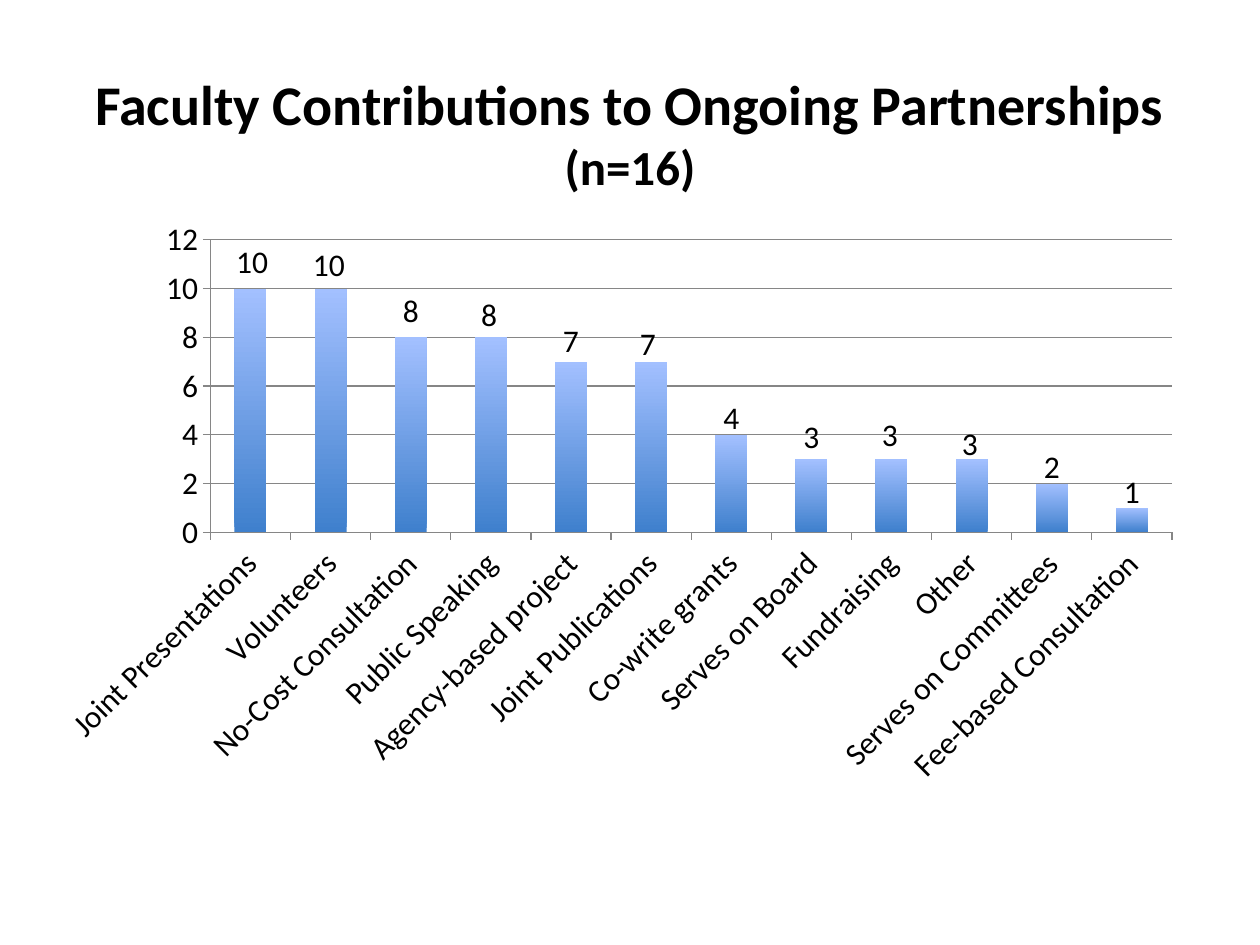
from dataclasses import dataclass

from lxml import etree
from pptx import Presentation
from pptx import util as u
from pptx.chart.data import CategoryChartData
from pptx.dml.color import RGBColor
from pptx.enum import chart as ch
from pptx.enum import text
from pptx.oxml.ns import qn

FONT = "Calibri"
BLACK, GREY = "000000", "868686"
BAR_BOTTOM, BAR_TOP = "3F80CD", "A3C0FF"


@dataclass
class Contribution:
    name: str
    count: int
    lift: float  # label shift upwards, in percent of the chart height
    shift: float = 0  # label shift sideways, in percent of the chart width


CONTRIBUTIONS = [
    Contribution("Joint Presentations", 10, 8.5, 0.15),
    Contribution("Volunteers", 10, 7.9, -0.15),
    Contribution("No-Cost Consultation", 8, 8.5),
    Contribution("Public Speaking", 8, 7.7, -0.15),
    Contribution("Agency-based project", 7, 7.5),
    Contribution("Joint Publications", 7, 7, -0.3),
    Contribution("Co-write grants", 4, 6.8),
    Contribution("Serves on Board", 3, 7.7),
    Contribution("Fundraising", 3, 8, -0.15),
    Contribution("Other", 3, 6.5, -0.15),
    Contribution("Serves on Committees", 2, 6.8),
    Contribution("Fee-based Consultation", 1, 6.7),
]


def rgb(color: str) -> RGBColor:
    return RGBColor.from_string(color)


def style_font(font, size: float, bold: bool = False) -> None:
    font.name, font.size, font.bold = FONT, u.Pt(size), bold
    font.color.rgb = rgb(BLACK)


def style_line(line) -> None:
    line.color.rgb = rgb(GREY)
    line.width = u.Pt(0.75)


def manual_layout(*modes: tuple[str, str], **percents: float) -> etree._Element:
    """Make a chart layout from mode settings and percentages of the chart."""
    layout = etree.Element(qn("c:layout"))
    manual = etree.SubElement(layout, qn("c:manualLayout"))
    shares = [(tag, f"{value / 100:.4f}") for tag, value in percents.items()]
    for tag, value in [*modes, *shares]:
        etree.SubElement(manual, qn(f"c:{tag}")).set("val", value)
    return layout


def add_title(slide) -> None:
    sp = slide.shapes.title
    sp.left, sp.top, sp.width, sp.height = u.Cm(1.27), u.Cm(1.27), u.Cm(22.86), u.Cm(3.18)
    tf = sp.text_frame
    tf.word_wrap = True
    tf.vertical_anchor = text.MSO_ANCHOR.TOP
    p = tf.paragraphs[0]
    p.alignment = text.PP_ALIGN.CENTER
    for words, size in (("Faculty Contributions to Ongoing Partnerships ", 32), ("(n=16)", 28)):
        r = p.add_run()
        r.text = words
        style_font(r.font, size, bold=True)


def add_labels(series) -> None:
    """Show each value, lifted from the inside end to above its bar."""
    for i, item in enumerate(CONTRIBUTIONS):
        series.points[i].data_label.position = ch.XL_LABEL_POSITION.INSIDE_END
        label = series._element.findall(f".//{qn('c:dLbl')}")[i]
        label.find(qn("c:idx")).addnext(manual_layout(x=item.shift, y=-item.lift))


def add_contribution_chart(slide) -> None:
    data = CategoryChartData()
    data.categories = [item.name for item in CONTRIBUTIONS]
    data.add_series("Series 1", [item.count for item in CONTRIBUTIONS])
    chart = slide.shapes.add_chart(
        ch.XL_CHART_TYPE.COLUMN_STACKED,
        u.Cm(1.27), u.Cm(4.45), u.Cm(22.86), u.Cm(11.94), data).chart
    chart.has_legend = chart.has_title = False
    style_font(chart.font, 18)

    # Bars
    plot = chart.plots[0]
    plot.gap_width, plot.overlap, plot.vary_by_categories = 150, 100, False
    series = plot.series[0]
    fill = series.format.fill
    fill.gradient()
    fill.gradient_angle = 90
    for stop, color in zip(fill.gradient_stops, (BAR_BOTTOM, BAR_TOP)):
        stop.color.rgb = rgb(color)
    add_labels(series)

    # Axes
    for axis in (chart.category_axis, chart.value_axis):
        axis.major_tick_mark = ch.XL_TICK_MARK.OUTSIDE
        style_line(axis.format.line)
        style_font(axis.tick_labels.font, 18)
    value_axis = chart.value_axis
    value_axis.minimum_scale, value_axis.maximum_scale, value_axis.major_unit = 0, 12, 2
    value_axis.has_major_gridlines = True
    style_line(value_axis.major_gridlines.format.line)
    chart.category_axis._element.find(f".//{qn('a:bodyPr')}").set("rot", "-2700000")

    # Plot area
    area = chart._chartSpace.find(f".//{qn('c:plotArea')}")
    for old in area.findall(qn("c:layout")):
        area.remove(old)
    area.insert(0, manual_layout(
        ("layoutTarget", "inner"), ("xMode", "edge"), ("yMode", "edge"),
        x=13, y=3.2, w=84.8, h=49.4))


def main() -> None:
    prs = Presentation()
    prs.slide_width, prs.slide_height = u.Cm(25.4), u.Cm(19.05)
    slide = prs.slides.add_slide(prs.slide_layouts[5])
    add_title(slide)
    add_contribution_chart(slide)
    prs.save("out.pptx")


if __name__ == "__main__":
    main()
